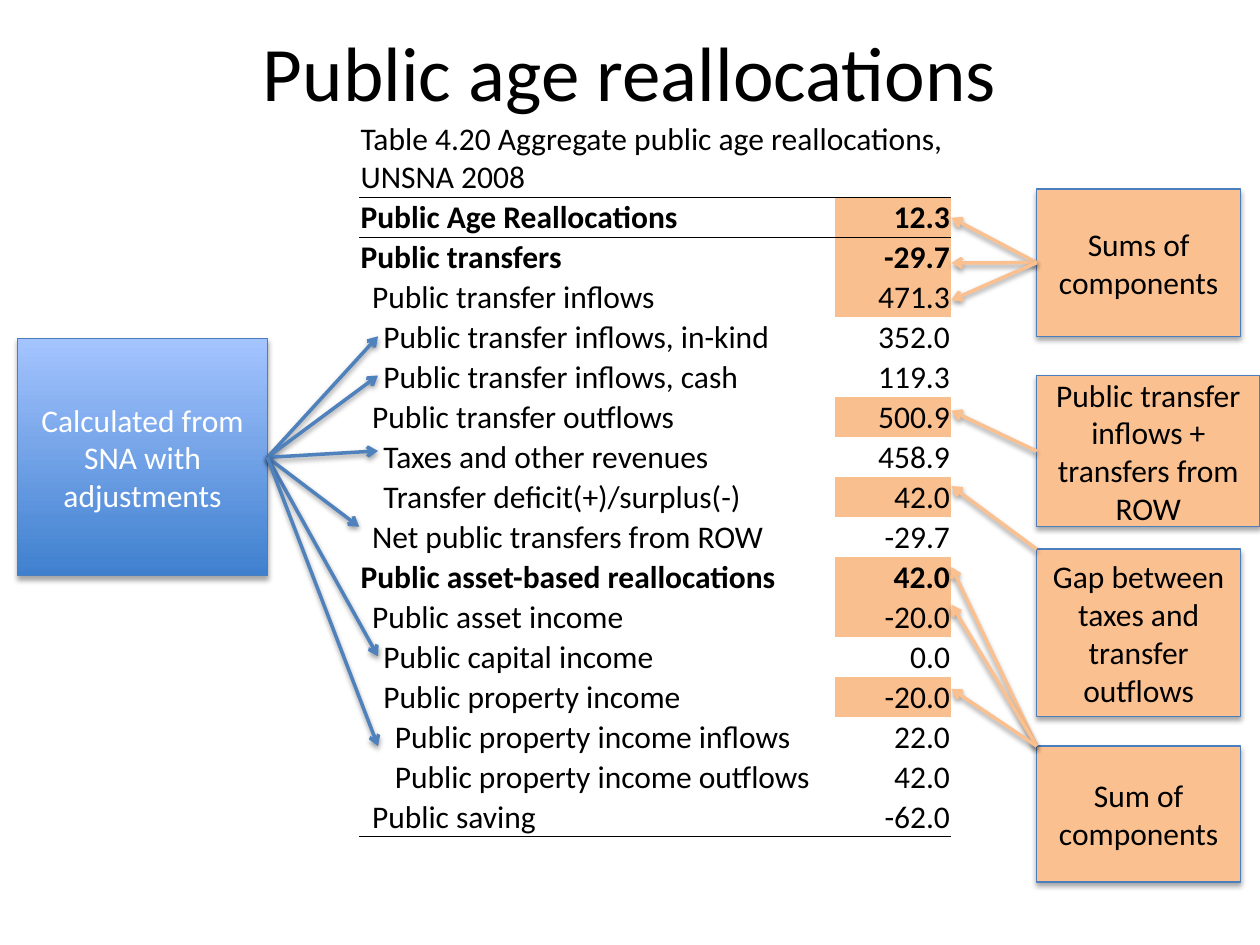
"""Build the slide on public age reallocations."""
from dataclasses import dataclass
from typing import Any, NamedTuple

import lxml.etree
import pptx
import pptx.dml.color
import pptx.enum.shapes
import pptx.enum.text
import pptx.oxml.ns
import pptx.util

Cm = pptx.util.Cm
Pt = pptx.util.Pt
RGB = pptx.dml.color.RGBColor.from_string
PP_ALIGN = pptx.enum.text.PP_ALIGN
ANCHOR = pptx.enum.text.MSO_ANCHOR
LEFT, RIGHT = 1, 3


@dataclass(frozen=True)
class Theme:
    font: str = "Calibri"
    title: int = 44
    body: int = 18
    ink: str = "000000"
    paper: str = "FFFFFF"
    highlight: str = "FABF8F"
    note: str = "FAC090"
    outline: str = "4B7EBC"
    source: str = "4F81BD"
    gradient: tuple[str, str] = ("3F80CE", "A4C4FF")
    no_grid: str = "{2D5ABB26-0587-4C30-8999-92F81FD0307C}"


class Row(NamedTuple):
    level: int
    label: str
    value: str
    marked: bool = False


class Note(NamedTuple):
    text: str
    box: tuple[float, float, float, float]
    targets: tuple[tuple[float, float], ...]
    site: int | None
    fill: str | None
    ink: str
    arrow: str


THEME = Theme()
TABLE_LEFT, TABLE_TOP = 7.24, 2.39
WIDTHS = (9.6, 2.34)
CAPTION_H, ROW_H = 1.56, 0.8
TABLE_RIGHT, NOTE_LEFT, NOTE_W = 19.18, 20.9, 4.11
LABEL_LEFT = 7.62
CAPTION = "Table 4.20 Aggregate public age reallocations, UNSNA 2008"

ROWS = [
    Row(0, "Public Age Reallocations", "12.3", True),
    Row(0, "Public transfers", "-29.7", True),
    Row(1, "Public transfer inflows", "471.3", True),
    Row(2, "Public transfer inflows, in-kind", "352.0"),
    Row(2, "Public transfer inflows, cash", "119.3"),
    Row(1, "Public transfer outflows", "500.9", True),
    Row(2, "Taxes and other revenues", "458.9"),
    Row(2, "Transfer deficit(+)/surplus(-)", "42.0", True),
    Row(1, "Net public transfers from ROW", "-29.7"),
    Row(0, "Public asset-based reallocations", "42.0", True),
    Row(1, "Public asset income", "-20.0", True),
    Row(2, "Public capital income", "0.0"),
    Row(2, "Public property income", "-20.0", True),
    Row(3, "Public property income inflows", "22.0"),
    Row(3, "Public property income outflows", "42.0"),
    Row(1, "Public saving", "-62.0"),
]


def orange_note(text: str, top: float, height: float, ends: tuple[float, ...],
                site: int | None = None, width: float = NOTE_W) -> Note:
    """Describe a note on the right with arrows to the value column."""
    return Note(text, (NOTE_LEFT, top, width, height),
                tuple((TABLE_RIGHT, y) for y in ends), site,
                THEME.note, THEME.ink, THEME.note)


NOTES = [
    orange_note("Sums of components", 3.81, 2.97, (4.39, 5.3, 6.05), LEFT),
    orange_note("Public transfer inflows + transfers from ROW", 7.57, 3.05,
                (8.28,), LEFT, 4.5),
    orange_note("Gap between taxes and transfer outflows", 11.07, 3.38, (9.8,)),
    orange_note("Sum of components", 15.04, 2.74, (11.43, 12.19, 13.89)),
    Note("Calculated from SNA with adjustments", (0.36, 6.83, 5.03, 4.78),
         ((LABEL_LEFT, 6.78), (LABEL_LEFT, 7.57), (LABEL_LEFT, 9.09),
          (TABLE_LEFT, 10.62), (LABEL_LEFT, 13.23), (LABEL_LEFT, 15.04)),
         RIGHT, None, THEME.paper, THEME.source),
]


def apply(obj: Any, values: dict[str, Any]) -> None:
    """Set each named attribute of an object."""
    for name, value in values.items():
        setattr(obj, name, value)


def add_xml(parent: Any, tag: str, **attrs: Any) -> Any:
    """Append a drawing element with the given attributes."""
    return lxml.etree.SubElement(parent, pptx.oxml.ns.qn(tag),
                                 {k: str(v) for k, v in attrs.items()})


def write(tf: Any, text: str, size: int = THEME.body, color: str = THEME.ink,
          align: Any = PP_ALIGN.LEFT, bold: bool = False) -> None:
    """Write one formatted paragraph."""
    p = tf.paragraphs[0]
    p.alignment = align
    r = p.add_run()
    r.text = text
    apply(r.font, {"name": THEME.font, "size": Pt(size), "bold": bold})
    r.font.color.rgb = RGB(color)


def add_shadow(s: Any, alpha: int, dist: float) -> None:
    """Give a shape a soft shadow below it."""
    effects = add_xml(s._element.spPr, "a:effectLst")
    shadow = add_xml(effects, "a:outerShdw", blurRad=Pt(3.1), dist=Pt(dist),
                     dir=5400000, rotWithShape=0)
    color = add_xml(shadow, "a:srgbClr", val=THEME.ink)
    add_xml(color, "a:alpha", val=alpha * 1000)


def add_border(cell: Any, side: str) -> None:
    """Draw a thin rule on one side of a cell."""
    tc_pr = cell._tc.get_or_add_tcPr()
    ln = add_xml(tc_pr, side, w=Pt(0.5))
    add_xml(add_xml(ln, "a:solidFill"), "a:srgbClr", val=THEME.ink)
    tc_pr.insert(0, ln)


def add_cell(cell: Any, text: str, level: int = 0, fill: str | None = None,
             **style: Any) -> None:
    """Fill in one table cell."""
    apply(cell, {"margin_left": Cm(0.03 + 0.23 * level), "margin_right": Cm(0.03),
                 "margin_top": Cm(0.03), "margin_bottom": 0,
                 "vertical_anchor": ANCHOR.BOTTOM})
    if fill:
        cell.fill.solid()
        cell.fill.fore_color.rgb = RGB(fill)
    else:
        cell.fill.background()
    write(cell.text_frame, text, **style)


def add_accounts(sp: Any) -> None:
    """Add the table of reallocations."""
    table = sp.add_table(len(ROWS) + 1, 2, Cm(TABLE_LEFT), Cm(TABLE_TOP),
                         Cm(sum(WIDTHS)), Cm(CAPTION_H + ROW_H * len(ROWS))).table
    apply(table, {"first_row": False, "horz_banding": False})
    table._tbl.tblPr.find(pptx.oxml.ns.qn("a:tableStyleId")).text = THEME.no_grid
    for column, width in zip(table.columns, WIDTHS):
        column.width = Cm(width)
    for i, row in enumerate(table.rows):
        row.height = Cm(ROW_H if i else CAPTION_H)
    table.cell(0, 0).merge(table.cell(0, 1))
    add_cell(table.cell(0, 0), CAPTION)
    for i, row in enumerate(ROWS, 1):
        add_cell(table.cell(i, 0), row.label, row.level, bold=row.level == 0)
        add_cell(table.cell(i, 1), row.value, fill=THEME.highlight if row.marked else None,
                 align=PP_ALIGN.RIGHT, bold=row.level == 0)
    for i, side in ((0, "a:lnB"), (1, "a:lnT"), (len(ROWS), "a:lnB")):
        for cell in table.rows[i].cells:
            add_border(cell, side)


def add_note(sp: Any, note: Note) -> None:
    """Add a note box and its arrows."""
    s = sp.add_shape(pptx.enum.shapes.MSO_SHAPE.RECTANGLE, *map(Cm, note.box))
    if note.fill:
        s.fill.solid()
        s.fill.fore_color.rgb = RGB(note.fill)
    else:
        s.fill.gradient()
        s.fill.gradient_angle = 90
        for stop, color, position in zip(s.fill.gradient_stops, THEME.gradient, (0, 1)):
            stop.color.rgb = RGB(color)
            stop.position = position
    s.line.color.rgb = RGB(THEME.outline)
    s.line.width = Pt(0.75)
    add_shadow(s, 35, 1.8)
    apply(s.text_frame, {"word_wrap": True, "vertical_anchor": ANCHOR.MIDDLE})
    write(s.text_frame, note.text, color=note.ink, align=PP_ALIGN.CENTER)
    for x, y in note.targets:
        line = sp.add_connector(pptx.enum.shapes.MSO_CONNECTOR.STRAIGHT,
                                s.left, s.top, Cm(x), Cm(y))
        if note.site is not None:
            line.begin_connect(s, note.site)
        line.line.color.rgb = RGB(note.arrow)
        line.line.width = Pt(2)
        add_xml(line._element.spPr.find(pptx.oxml.ns.qn("a:ln")), "a:tailEnd", type="arrow")
        add_shadow(line, 38, 1.6)


def main() -> None:
    """Build and save the presentation."""
    prs = pptx.Presentation()
    apply(prs, {"slide_width": Cm(25.4), "slide_height": Cm(19.05)})
    slide = prs.slides.add_slide(prs.slide_layouts[5])
    title = slide.shapes.title
    apply(title, {"left": Cm(1.27), "top": Cm(0.76), "width": Cm(22.86), "height": Cm(1.32)})
    title.text_frame.vertical_anchor = ANCHOR.MIDDLE
    write(title.text_frame, "Public age reallocations", THEME.title, align=PP_ALIGN.CENTER)
    add_accounts(slide.shapes)
    for note in NOTES:
        add_note(slide.shapes, note)
    prs.save("out.pptx")


if __name__ == "__main__":
    main()
